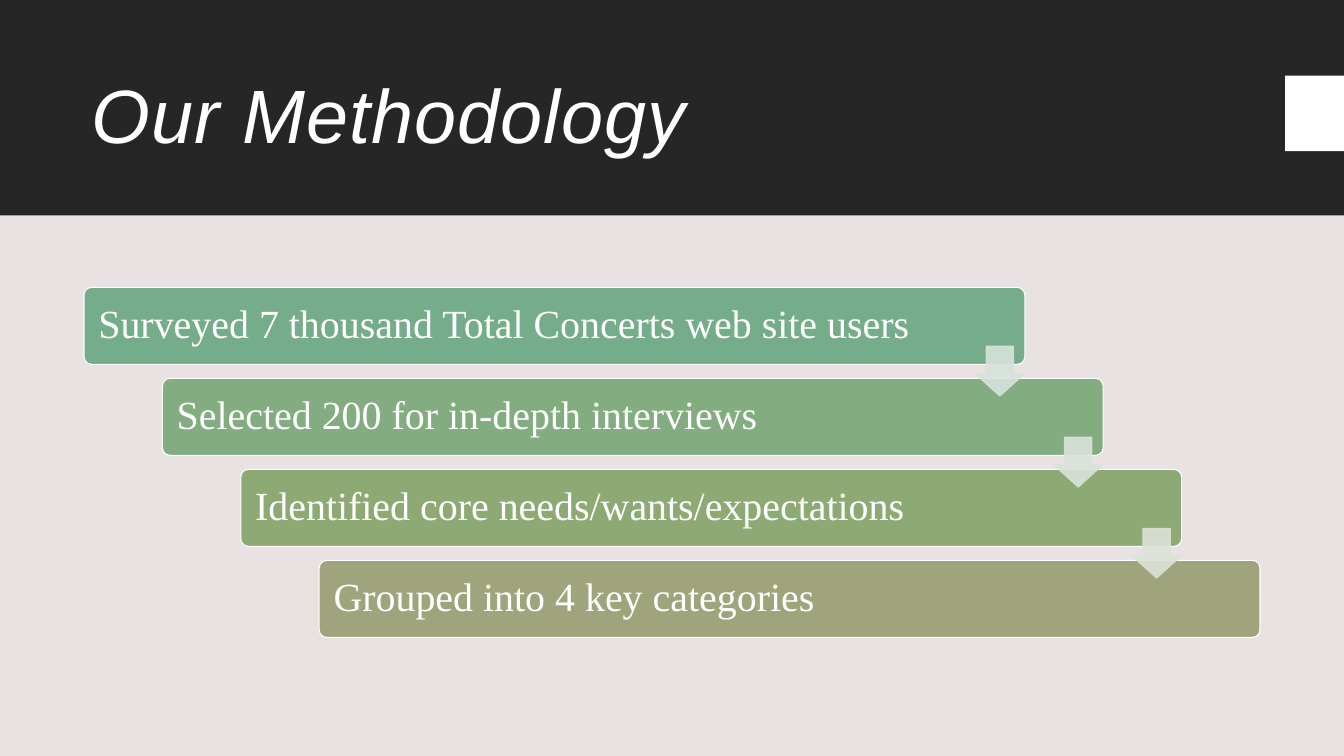
import math
from dataclasses import dataclass

from lxml import etree
from pptx import Presentation
from pptx import util as u
from pptx.dml.color import RGBColor
from pptx.enum import shapes, text
from pptx.oxml.ns import qn


@dataclass(frozen=True)
class Theme:
    width: float = 17.78
    height: float = 10
    paper: str = "E8E2E3"
    dark: str = "262626"
    light: str = "FFFFFF"
    title_font: str = "Arial"
    body_font: str = "Times New Roman"
    title_size: int = 72
    body_size: int = 38


THEME = Theme()
MARGIN = THEME.width / 16
CONTENT = THEME.width - 2 * MARGIN
BAR_WIDTH, BAR_HEIGHT, BAR_TOP = CONTENT * 0.8, 1.02, 3.8
ROW_STEP = 1.204
ARROW_SIZE, ARROW_DROP = 0.66, 0.78

STEPS = [
    ("Surveyed 7 thousand Total Concerts web site users", "75AC8A"),
    ("Selected 200 for in-depth interviews", "83AC81"),
    ("Identified core needs/wants/expectations", "8DAA74"),
    ("Grouped into 4 key categories", "9FA47C"),
]
ARROW_COLORS = ["D6E3DA", "D9E3D8", "DBE2D6"]


def apply(target, values):
    for name, value in values.items():
        setattr(target, name, value)


def paint(shape, fill, line=None):
    shape.shadow.inherit = False
    shape.fill.solid()
    shape.fill.fore_color.rgb = RGBColor.from_string(fill)
    if line:
        shape.line.color.rgb = RGBColor.from_string(line)
        shape.line.width = u.Pt(1)
    else:
        shape.line.fill.background()


def add_block(page, kind, left, top, width, height, fill, line=None, adjustments=()):
    shape = page.shapes.add_shape(kind, *map(u.Inches, (left, top, width, height)))
    paint(shape, fill, line)
    for index, value in enumerate(adjustments):
        shape.adjustments[index] = value
    return shape


def write(shape, words, font, size, inset, **font_values):
    frame = shape.text_frame
    apply(frame, {
        "word_wrap": True,
        "auto_size": text.MSO_AUTO_SIZE.NONE,
        "vertical_anchor": text.MSO_ANCHOR.MIDDLE,
        "margin_left": u.Inches(inset),
        "margin_right": u.Inches(inset),
    })
    para = frame.paragraphs[0]
    apply(para, {"alignment": text.PP_ALIGN.LEFT, "line_spacing": 0.9})
    span = para.add_run()
    span.text = words
    apply(span.font, {"name": font, "size": u.Pt(size), **font_values})
    span.font.color.rgb = RGBColor.from_string(THEME.light)
    return span


def set_opacity(shape, percent):
    for color in shape.element.spPr.iter(qn("a:srgbClr")):
        etree.SubElement(color, qn("a:alpha"), val=str(percent * 1000))


def add_header(page):
    band = add_block(page, shapes.MSO_SHAPE.RECTANGLE, 0, 0, THEME.width, 2.85, THEME.dark)
    title = page.shapes.title
    band.element.addnext(title.element)
    apply(title, {
        "left": u.Inches(MARGIN),
        "top": u.Inches(0.61),
        "width": u.Inches(CONTENT),
        "height": u.Inches(1.93),
    })
    span = write(title, "Our Methodology", THEME.title_font, THEME.title_size, 0.1, italic=True)
    span.font.bold = False
    span.font._element.set("spc", "100")


def add_half_circle(page, center_y, radius, segments=48):
    angles = [math.pi * (0.5 + step / segments) for step in range(segments + 1)]
    points = [
        (THEME.width + radius * math.cos(angle), center_y - radius * math.sin(angle))
        for angle in angles
    ]
    builder = page.shapes.build_freeform(*points[0], scale=u.Inches(1))
    builder.add_line_segments(points[1:], close=True)
    paint(builder.convert_to_shape(), THEME.light)


def add_step(page, row, words, color):
    left = MARGIN + row * (CONTENT - BAR_WIDTH) / (len(STEPS) - 1)
    bar = add_block(page, shapes.MSO_SHAPE.ROUNDED_RECTANGLE, left, BAR_TOP + row * ROW_STEP,
                    BAR_WIDTH, BAR_HEIGHT, color, THEME.light, [0.1])
    write(bar, words, THEME.body_font, THEME.body_size, 0.16)


def add_arrow(page, row, color):
    right = MARGIN + BAR_WIDTH + row * (CONTENT - BAR_WIDTH) / (len(STEPS) - 1)
    arrow = add_block(page, shapes.MSO_SHAPE.DOWN_ARROW, right - ARROW_SIZE,
                      BAR_TOP + ARROW_DROP + row * ROW_STEP,
                      ARROW_SIZE, ARROW_SIZE, color, color, [0.55, 0.45])
    set_opacity(arrow, 90)


def main():
    deck = Presentation()
    apply(deck, {
        "slide_width": u.Inches(THEME.width),
        "slide_height": u.Inches(THEME.height),
    })
    page = deck.slides.add_slide(deck.slide_layouts[5])
    page.background.fill.solid()
    page.background.fill.fore_color.rgb = RGBColor.from_string(THEME.paper)
    add_header(page)
    add_half_circle(page, 1.425, 0.595)
    for row, (words, color) in enumerate(STEPS):
        add_step(page, row, words, color)
    for row, color in enumerate(ARROW_COLORS):
        add_arrow(page, row, color)
    deck.save("out.pptx")


if __name__ == "__main__":
    main()
